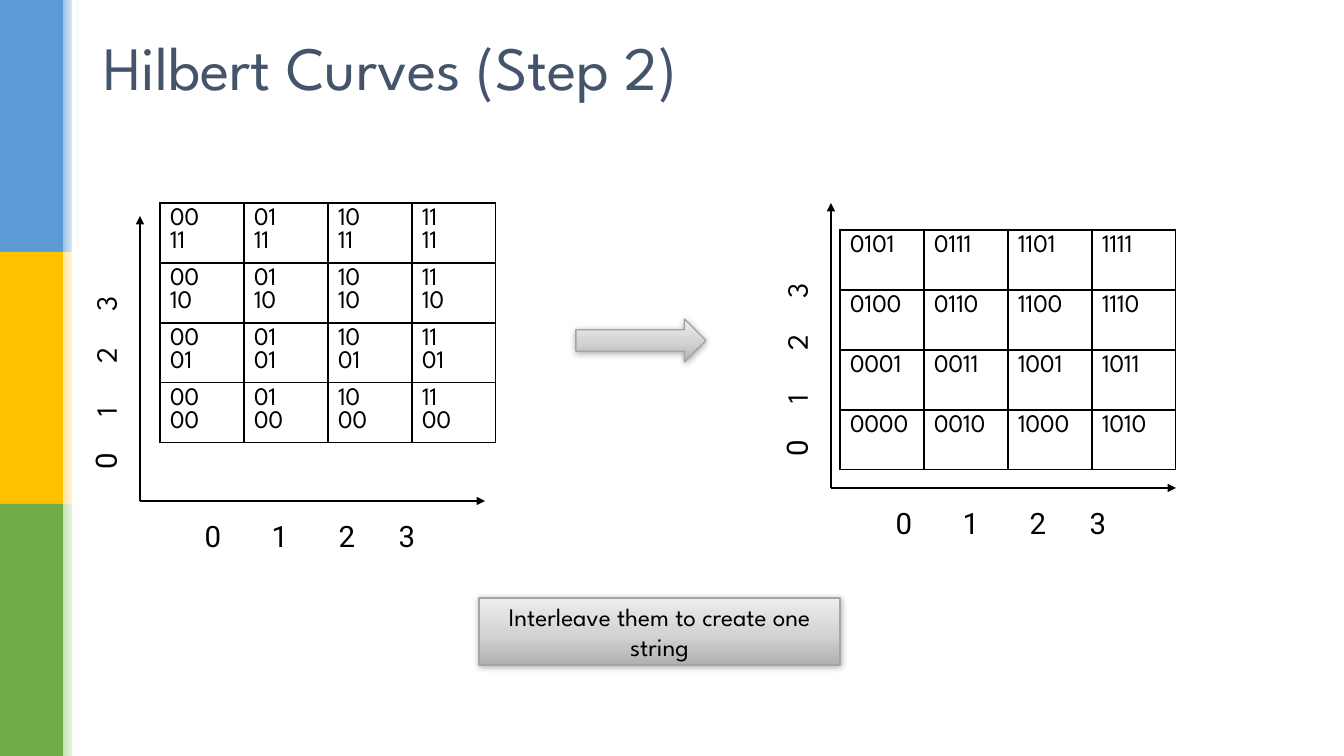
"""Build the Hilbert curve slide that interleaves column and row bits."""
from dataclasses import dataclass

from lxml import etree
from pptx import Presentation
from pptx.dml.color import RGBColor
from pptx.enum.shapes import MSO_CONNECTOR, MSO_SHAPE
from pptx.enum.text import MSO_ANCHOR, PP_ALIGN
from pptx.oxml.ns import qn
from pptx.util import Emu, Pt

RECT, ARROW = MSO_SHAPE.RECTANGLE, MSO_SHAPE.RIGHT_ARROW
STRAIGHT = MSO_CONNECTOR.STRAIGHT
MIDDLE = MSO_ANCHOR.MIDDLE
LEFT, CENTER = PP_ALIGN.LEFT, PP_ALIGN.CENTER
TITLE_ONLY = 5
SIZE = 4


@dataclass(frozen=True)
class Theme:
    font: str = "League Spartan"
    digit_font: str = "Roboto"
    title_size: int = 44
    body_size: int = 18
    tick_size: int = 21
    title: str = "44546A"
    ink: str = "000000"
    paper: str = "FFFFFF"
    outline: str = "A5A5A5"
    metal: tuple = ((0, "B1B1B1"), (48, "D5D5D5"), (100, "EDEDED"))
    bands: tuple = (("5B9BD5", "9DC3E6"), ("FFC000", "FFE699"), ("70AD47", "C5E0B4"))


def px(n):
    return Emu(round(n * 914400 / 100.8))


def rgb(color):
    return RGBColor.from_string(color)


def add(parent, tag, **attrs):
    return etree.SubElement(parent, qn(tag), {k: str(v) for k, v in attrs.items()})


class Deck:
    def __init__(self, theme):
        self.t = theme
        self.prs = Presentation()
        self.prs.slide_width, self.prs.slide_height = px(1344), px(756)
        self.s = self.prs.slides.add_slide(self.prs.slide_layouts[TITLE_ONLY])

    def style(self, font, size, color, name=None):
        font.name, font.size = name or self.t.font, Pt(size)
        font.color.rgb = rgb(color)

    def title(self, text, *box):
        sp = self.s.shapes.title
        sp.left, sp.top, sp.width, sp.height = map(px, box)
        tf = sp.text_frame
        tf.text, tf.vertical_anchor = text, MIDDLE
        p = tf.paragraphs[0]
        p.alignment, p.line_spacing = LEFT, 0.9
        self.style(p.font, self.t.title_size, self.t.title)

    def shape(self, kind, box, color=None, stops=None, angle=0):
        sp = self.s.shapes.add_shape(kind, *map(px, box))
        sp.shadow.inherit = False
        sp.line.fill.background()
        if stops:
            sp.fill.gradient()
            sp.fill.gradient_angle = angle
            gs_lst = sp._element.spPr.find(".//" + qn("a:gsLst"))
            for gs in list(gs_lst):
                gs_lst.remove(gs)
            for pos, stop in stops:
                add(add(gs_lst, "a:gs", pos=pos * 1000), "a:srgbClr", val=stop)
        else:
            sp.fill.solid()
            sp.fill.fore_color.rgb = rgb(color)
        return sp

    def metal(self, kind, *box):
        sp = self.shape(kind, box, stops=self.t.metal, angle=90)
        sp.line.color.rgb, sp.line.width = rgb(self.t.outline), Pt(1)
        effects = sp._element.spPr.find(qn("a:effectLst"))
        shadow = add(effects, "a:outerShdw", blurRad=Pt(5), dist=Pt(1), dir=5400000, rotWithShape=0)
        add(add(shadow, "a:srgbClr", val=self.t.ink), "a:alpha", val=32000)
        return sp

    def callout(self, text, *box):
        tf = self.metal(RECT, *box).text_frame
        tf.word_wrap, tf.vertical_anchor = True, MIDDLE
        p = tf.paragraphs[0]
        p.text, p.alignment = text, CENTER
        self.style(p.font, self.t.body_size, self.t.ink)

    def axis(self, x1, y1, x2, y2):
        line = self.s.shapes.add_connector(STRAIGHT, *map(px, (x1, y1, x2, y2)))
        line.line.color.rgb, line.line.width = rgb(self.t.ink), Pt(1.75)
        add(line.line._get_or_add_ln(), "a:tailEnd", type="triangle")
        add(line._element.spPr, "a:effectLst")

    def ticks(self, x, y, centres, fonts, rotation=0):
        sp = self.s.shapes.add_textbox(*map(px, (x, y, 269, 50)))
        sp.rotation = rotation
        sp.fill.solid()
        sp.fill.fore_color.rgb = rgb(self.t.paper)
        sp.text_frame.word_wrap = True
        p = sp.text_frame.paragraphs[0]
        tabs = add(p._p.get_or_add_pPr(), "a:tabLst")
        for n, (centre, name) in enumerate(zip(centres, fonts)):
            add(tabs, "a:tab", pos=px(centre), algn="ctr")
            r = p.add_run()
            r.text = f"\t{n}"
            self.style(r.font, self.t.tick_size, self.t.ink, name)

    def grid(self, x, y, label):
        cell_w, cell_h = 84, 60
        box = map(px, (x, y, SIZE * cell_w, SIZE * cell_h))
        table = self.s.shapes.add_table(SIZE, SIZE, *box).table
        table.first_row = table.horz_banding = False
        for i in range(SIZE):
            table.columns[i].width, table.rows[i].height = px(cell_w), px(cell_h)
            for j in range(SIZE):
                self.cell(table.cell(i, j), label(f"{j:02b}", f"{SIZE - 1 - i:02b}"))

    def cell(self, cell, text):
        tc_pr = cell._tc.get_or_add_tcPr()
        for side in "LRTB":
            ln = add(tc_pr, f"a:ln{side}", w=Pt(1))
            add(add(ln, "a:solidFill"), "a:srgbClr", val=self.t.ink)
        cell.fill.solid()
        cell.fill.fore_color.rgb = rgb(self.t.paper)
        cell.text_frame.text = text
        for p in cell.text_frame.paragraphs:
            self.style(p.font, self.t.body_size, self.t.ink)

    def axes(self, x, y):
        digits, body = self.t.digit_font, self.t.font
        self.axis(x, y, x + 345, y)
        self.axis(x, y, x, y - 285)
        self.ticks(x + 54, y + 12, (9, 76, 143, 203), [digits] * SIZE)
        self.ticks(x - 167, y - 159, (30, 80, 136, 188), [digits] + [body] * 3, 270)

    def side_bands(self):
        for i, (color, tint) in enumerate(self.t.bands):
            self.shape(RECT, (0, i * 252, 63, 252), color)
            self.shape(RECT, (63, i * 252, 16, 252), stops=((0, tint), (100, self.t.paper)))
        self.shape(RECT, (72, 0, 5, 756), self.t.paper)


def stack(column, row):
    return f"{column}\n{row}"


def interleave(column, row):
    return "".join(c + r for c, r in zip(column, row))


def main():
    deck = Deck(Theme())
    deck.side_bands()
    deck.title("Hilbert Curves (Step 2)", 93, 15, 1159, 111)
    deck.grid(160, 203, stack)
    deck.axes(140, 501)
    deck.grid(840, 230, interleave)
    deck.axes(831, 488)
    deck.metal(ARROW, 576, 319, 130, 43)
    deck.callout("Interleave them to create one string", 479, 598, 361, 67)
    deck.prs.save("out.pptx")


if __name__ == "__main__":
    main()
